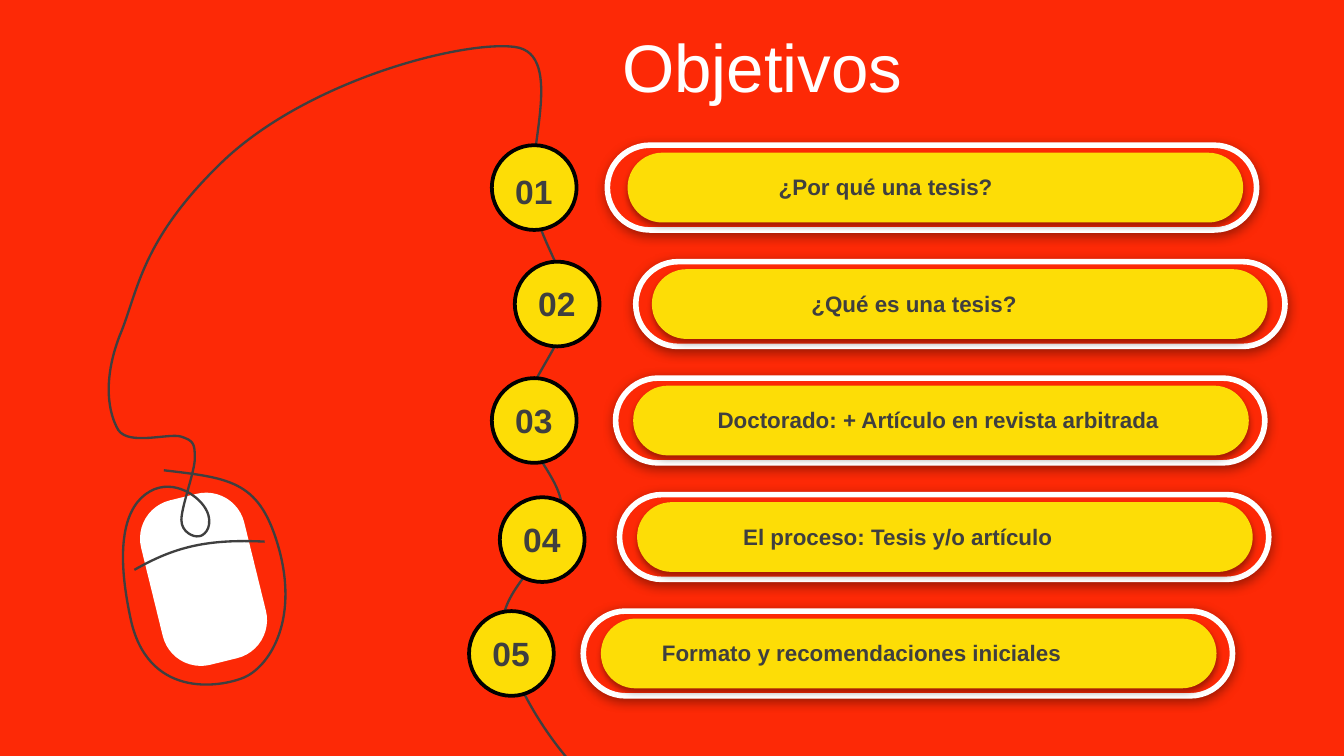
from dataclasses import dataclass

from lxml import etree
from pptx import Presentation
from pptx.dml.color import RGBColor
from pptx.enum import shapes, text
from pptx.oxml import ns
from pptx.util import Pt


@dataclass(frozen=True)
class Theme:
    red: str = "FD2906"
    yellow: str = "FDDD06"
    white: str = "FFFFFF"
    black: str = "000000"
    gray: str = "3F3F3F"
    font: str = "Arial"
    title_size: float = 36
    number_size: float = 18
    label_size: float = 12


@dataclass(frozen=True)
class Objective:
    label: str
    circle_left: float
    frame_left: float
    fill_inset: float = 9.4
    circle_drop: float = 0
    number_drop: float = 7.9
    label_width: float = 246.2


THEME = Theme()
FIRST_TOP, PITCH = 77.8, 62.4
CIRCLE, FRAME_WIDTH = 45.4, 347.8
FILL_WIDTH, FILL_HEIGHT = 329.8, 37.4

OBJECTIVES = [
    Objective("¿Por qué una tesis?", 263.5, 325.4, fill_inset=10.8, number_drop=10),
    Objective("¿Qué es una tesis?", 275.8, 340.6, fill_inset=8.6),
    Objective("Doctorado: + Artículo en revista arbitrada", 263.5, 329.8, label_width=293.8),
    Objective("El proceso: Tesis y/o artículo", 267.8, 331.9, circle_drop=1.4),
    Objective("Formato y recomendaciones iniciales", 251.3, 312.5),
]

# Start point, then two control points and an end point for each curve.
BUTTON_CREASE = [(72, 305.3), (93.6, 293), (110.9, 288.7), (141.8, 290.2)]
CABLE = [
    (87.8, 252),
    (124.6, 256.3), (139.7, 257.8), (149.8, 295.2),
    (159.8, 333.4), (144, 357.1), (131, 362.9),
    (117.4, 368.6), (78.5, 374.4), (69.8, 330.5),
    (60.5, 286.6), (69.1, 267.8), (82.8, 262.1),
    (95.8, 257), (109.4, 267.8), (111.6, 275.8),
    (113.8, 283.7), (108.7, 287.3), (106.6, 287.3),
    (103.7, 288), (97.2, 285.1), (97.2, 278.6),
    (97.2, 271.4), (104.4, 252.7), (104.4, 245.5),
    (104.4, 237.6), (103.7, 236.2), (97.2, 234),
    (90.7, 231.8), (69.1, 239), (63.4, 230.4),
    (58.3, 221.8), (54.7, 204.5), (64.1, 180),
    (74.2, 156.2), (74.9, 128.9), (120.2, 85.7),
    (166.3, 42.5), (248.4, 21.6), (275.8, 25.2),
    (303.8, 28.8), (280.8, 85), (285.8, 108.7),
    (290.2, 131.8), (304.6, 146.9), (303.8, 165.6),
    (303.1, 184.3), (281.5, 204.5), (280.8, 222.5),
    (280.1, 241.2), (303.1, 257), (301, 275.8),
    (299.5, 294.5), (269.3, 313.2), (269.3, 334.8),
    (270, 356.4), (287.3, 386.6), (303.8, 406.1),
]


def color(value):
    return RGBColor.from_string(value)


def set_all(target, values):
    for name, value in values.items():
        setattr(target, name, value)


def set_line(shape, line_color, width):
    shape.line.color.rgb = color(line_color)
    shape.line.width = Pt(width)


def add_shape(container, kind, box, fill, line=None, corner=None):
    shape = container.add_shape(kind, *map(Pt, box))
    shape.shadow.inherit = False
    shape.fill.solid()
    shape.fill.fore_color.rgb = color(fill)
    if line:
        set_line(shape, *line)
    else:
        shape.line.fill.background()
    if corner is not None:
        shape.adjustments[0] = corner
    return shape


def add_shadow(shape, opacity, blur, distance):
    """Cast a black shadow straight down."""
    effects = shape._element.spPr.find(ns.qn("a:effectLst"))
    shadow = etree.SubElement(
        effects, ns.qn("a:outerShdw"), blurRad=str(Pt(blur)),
        dist=str(Pt(distance)), dir="5400000", algn="t", rotWithShape="0")
    tint = etree.SubElement(shadow, ns.qn("a:srgbClr"), val=THEME.black)
    etree.SubElement(tint, ns.qn("a:alpha"), val=str(opacity * 1000))


def add_curve(container, points):
    """Draw an open chain of cubic curves."""
    start, *rest = [(Pt(x), Pt(y)) for x, y in points]
    builder = container.build_freeform(*start)
    builder.add_line_segments(rest, close=False)
    shape = builder.convert_to_shape()
    shape.shadow.inherit = False
    shape.fill.background()
    set_line(shape, THEME.gray, 1.25)
    outline = next(shape._element.iter(ns.qn("a:path")))
    segments = outline.findall(ns.qn("a:lnTo"))
    for index in range(0, len(segments), 3):
        curve = etree.SubElement(outline, ns.qn("a:cubicBezTo"))
        for segment in segments[index:index + 3]:
            curve.append(segment[0])
            outline.remove(segment)


def write(shape, content, size, text_color, bold, align, anchor):
    frame = shape.text_frame
    set_all(frame, {"word_wrap": True, "vertical_anchor": anchor,
                    "auto_size": text.MSO_AUTO_SIZE.NONE})
    paragraph = frame.paragraphs[0]
    paragraph.alignment = align
    run = paragraph.add_run()
    run.text = content
    set_all(run.font, {"name": THEME.font, "size": Pt(size), "bold": bold})
    run.font.color.rgb = color(text_color)


def add_label(container, box, content, size, anchor):
    label = container.add_textbox(*map(Pt, box))
    write(label, content, size, THEME.gray, True, text.PP_ALIGN.CENTER, anchor)


def add_title(slide, content):
    title = slide.shapes.title
    set_all(title, {"left": Pt(326.2), "top": Pt(12.2),
                    "width": Pt(393.8), "height": Pt(45.4)})
    write(title, content, THEME.title_size, THEME.white, False,
          text.PP_ALIGN.LEFT, text.MSO_ANCHOR.MIDDLE)


def add_mouse(container):
    body = add_shape(container, shapes.MSO_SHAPE.ROUNDED_RECTANGLE,
                     (80.6, 265, 56.9, 90.7), THEME.white, corner=0.37)
    body.rotation = 346.2
    add_curve(container, BUTTON_CREASE)
    add_curve(container, CABLE)


def add_number(container, objective, number, top):
    left, top = objective.circle_left, top + objective.circle_drop
    add_shape(container, shapes.MSO_SHAPE.OVAL, (left, top, CIRCLE, CIRCLE),
              THEME.yellow, (THEME.black, 2))
    add_label(container, (left + 3.4, top + objective.number_drop, 38.2, 28.8),
              f"{number:02}", THEME.number_size, text.MSO_ANCHOR.MIDDLE)


def add_bar(container, objective, top):
    pill = shapes.MSO_SHAPE.ROUNDED_RECTANGLE
    left = objective.frame_left
    group = container.add_group_shape().shapes
    frame = add_shape(group, pill, (left, top, FRAME_WIDTH, CIRCLE),
                      THEME.red, (THEME.white, 3), corner=0.5)
    add_shadow(frame, opacity=38, blur=6, distance=1.6)
    fill = add_shape(group, pill,
                     (left + objective.fill_inset, top + 4, FILL_WIDTH, FILL_HEIGHT),
                     THEME.yellow, corner=0.5)
    add_shadow(fill, opacity=35, blur=3.1, distance=1.8)
    add_label(container, (left + 26, top + 11.7, objective.label_width, 21.6),
              objective.label, THEME.label_size, text.MSO_ANCHOR.TOP)


def main():
    presentation = Presentation()
    set_all(presentation, {"slide_width": Pt(720), "slide_height": Pt(405)})
    slide = presentation.slides.add_slide(presentation.slide_layouts[5])
    slide.background.fill.solid()
    slide.background.fill.fore_color.rgb = color(THEME.red)
    add_mouse(slide.shapes)
    add_title(slide, "Objetivos")
    for index, objective in enumerate(OBJECTIVES):
        top = FIRST_TOP + index * PITCH
        add_number(slide.shapes, objective, index + 1, top)
        add_bar(slide.shapes, objective, top)
    presentation.save("out.pptx")


if __name__ == "__main__":
    main()
